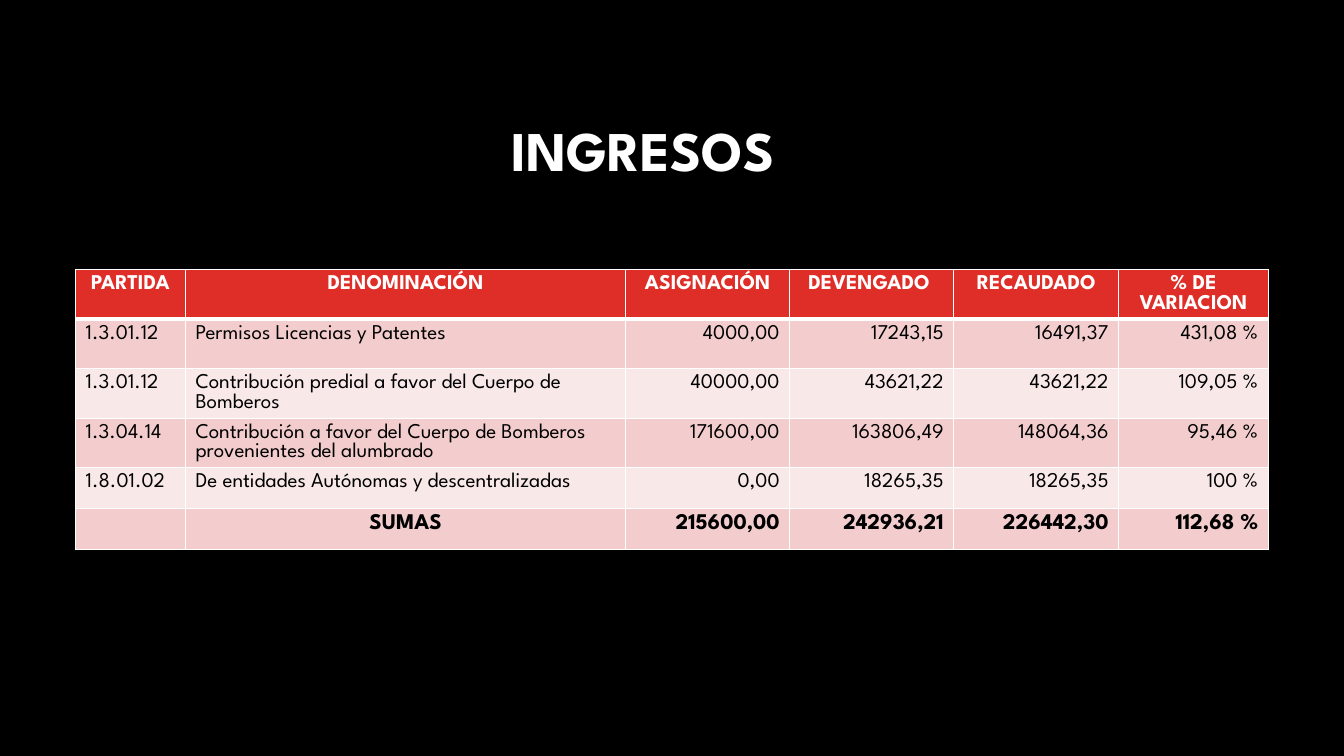
import pptx
import pptx.util
import pptx.dml.color
import pptx.enum.text
import pptx.oxml
import pptx.oxml.ns

Pt = pptx.util.Pt
Align = pptx.enum.text.PP_ALIGN
Anchor = pptx.enum.text.MSO_ANCHOR

TITLE = "INGRESOS "
ROWS = [
    ("PARTIDA", "DENOMINACIÓN", "ASIGNACIÓN", "DEVENGADO ", "RECAUDADO", "% DE VARIACION"),
    ("1.3.01.12", "Permisos Licencias y Patentes", "4000,00", "17243,15", "16491,37", "431,08 %"),
    ("1.3.01.12", "Contribución predial a favor del Cuerpo de Bomberos",
     "40000,00", "43621,22", "43621,22", "109,05 %"),
    ("1.3.04.14", "Contribución a favor del Cuerpo de Bomberos provenientes del alumbrado",
     "171600,00", "163806,49", "148064,36", "95,46 %"),
    ("1.8.01.02", "De entidades Autónomas y descentralizadas",
     "0,00", "18265,35", "18265,35", "100 %"),
    ("", "SUMAS", "215600,00", "242936,21", "226442,30", "112,68 %"),
]
WIDTHS = [78.5, 314.5, 117.2, 117.2, 117.8, 106.8]
HEIGHTS = [35.4, 35.4, 35.4, 35.4, 29.2, 29.2]
LEFT, TOP = 54, 192.6
BANDS = ["F3CDCD", "F9E8E8"]
FACE = "League Spartan"
HEAD = {"name": FACE, "size": Pt(15), "bold": True}
BODY = {"name": FACE, "size": Pt(15), "bold": False}
TOTAL = {"name": FACE, "size": Pt(16), "bold": True}
LARGE = {"name": FACE, "size": Pt(40), "bold": True}


def paint(target, color):
    target.rgb = pptx.dml.color.RGBColor.from_string(color)


def write(frame, text, style, color, align):
    para = frame.paragraphs[0]
    para.alignment = align
    run = para.add_run()
    run.text = text
    for name, value in style.items():
        setattr(run.font, name, value)
    paint(run.font.color, color)
    return para


def border(cell, edges):
    props = cell._tc.get_or_add_tcPr()
    for side, width in edges.items():
        props.append(pptx.oxml.parse_xml(
            f'<a:ln{side} {pptx.oxml.ns.nsdecls("a")} w="{Pt(width)}"><a:solidFill>'
            f'<a:srgbClr val="FFFFFF"/></a:solidFill></a:ln{side}>'))


def place(row, col):
    if row == 0 or (row == len(ROWS) - 1 and col == 1):
        return Align.CENTER
    return Align.LEFT if col < 2 else Align.RIGHT


def main():
    deck = pptx.Presentation()
    deck.slide_width, deck.slide_height = Pt(960), Pt(540)
    slide = deck.slides.add_slide(deck.slide_layouts[5])
    back = slide.background.fill
    back.solid()
    paint(back.fore_color, "000000")

    title = slide.shapes.title
    title.left, title.top, title.width, title.height = map(Pt, (125.3, 59, 678.2, 101.5))
    title.text_frame.vertical_anchor = Anchor.MIDDLE
    write(title.text_frame, TITLE, LARGE, "FFFFFF", Align.CENTER).line_spacing = 0.9

    grid = slide.shapes.add_table(len(ROWS), len(WIDTHS), Pt(LEFT), Pt(TOP),
                                  Pt(sum(WIDTHS)), Pt(sum(HEIGHTS))).table
    for col, width in enumerate(WIDTHS):
        grid.columns[col].width = Pt(width)
    for row, texts in enumerate(ROWS):
        grid.rows[row].height = Pt(HEIGHTS[row])
        style = HEAD if row == 0 else TOTAL if row == len(ROWS) - 1 else BODY
        fill = BANDS[(row - 1) % 2] if row else "DF2E28"
        ink = "000000" if row else "FFFFFF"
        for col, text in enumerate(texts):
            cell = grid.cell(row, col)
            border(cell, {"L": 1, "R": 1, "T": 3 if row == 1 else 1, "B": 1 if row else 3})
            cell.fill.solid()
            paint(cell.fill.fore_color, fill)
            if text:
                write(cell.text_frame, text, style, ink, place(row, col))

    deck.save("out.pptx")


if __name__ == "__main__":
    main()
